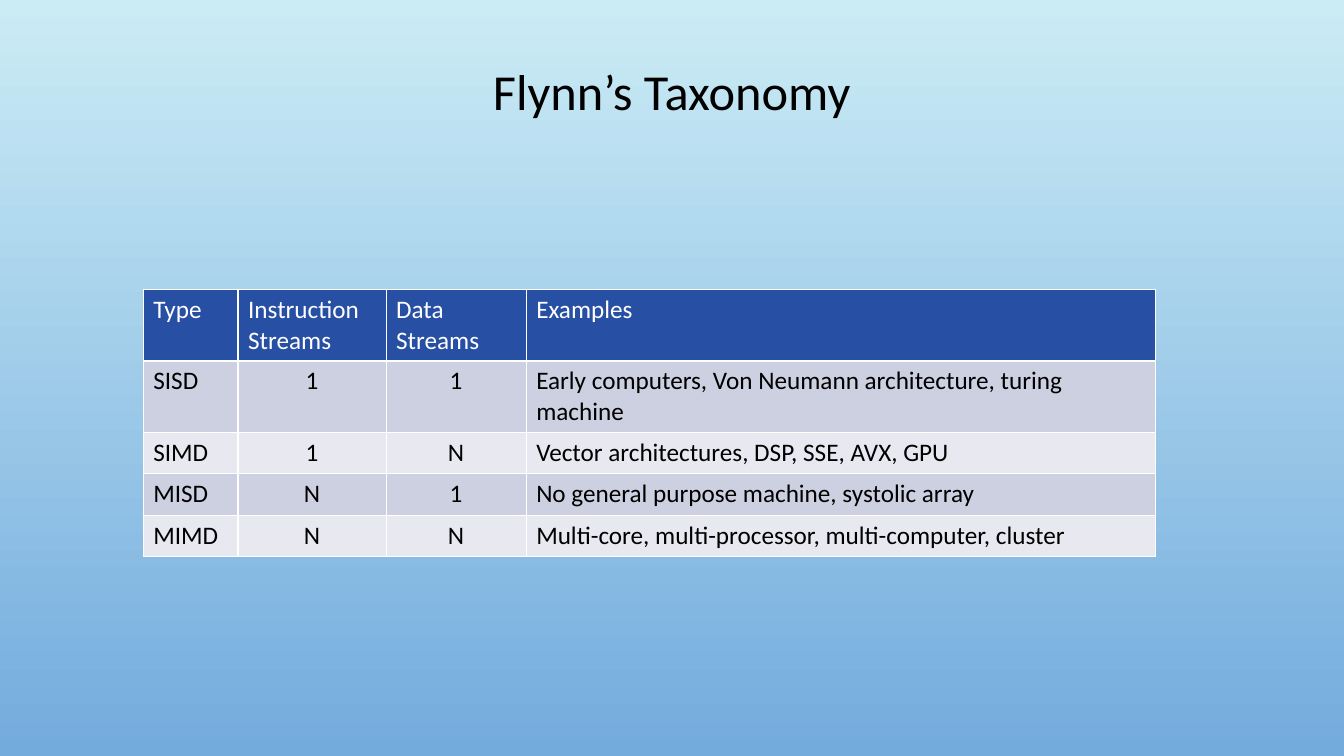
from dataclasses import dataclass

from lxml.etree import SubElement as Sub
from pptx import Presentation as Deck
from pptx.dml.color import RGBColor as Rgb
from pptx.enum.text import MSO_ANCHOR as Anchor, MSO_AUTO_SIZE as Fit, PP_ALIGN as Align
from pptx.oxml.ns import qn
from pptx.util import Cm, Pt


@dataclass(frozen=True)
class Theme:
    """Colours, font and type sizes of the slide."""
    font: str = "Calibri"
    sky: str = "CBECF5"
    sea: str = "73ABDD"
    head: str = "274FA4"
    odd: str = "CDD0E0"
    even: str = "E8E9F0"
    ink: str = "000000"
    white: str = "FFFFFF"
    title: int = 36
    cell: int = 18


LOOK = Theme()
WIDTHS = (2.39, 3.73, 3.53, 15.85)
ROWS = (
    ("Type", "Instruction Streams", "Data Streams", "Examples"),
    ("SISD", "1", "1", "Early computers, Von Neumann architecture, turing machine"),
    ("SIMD", "1", "N", "Vector architectures, DSP, SSE, AVX, GPU"),
    ("MISD", "N", "1", "No general purpose machine, systolic array"),
    ("MIMD", "N", "N", "Multi-core, multi-processor, multi-computer, cluster"),
)


def write(frame, text, size=LOOK.cell, color=LOOK.ink, align=Align.LEFT, space=None):
    """Put formatted text into a text frame."""
    frame.text = text
    para = frame.paragraphs[0]
    para.alignment = align
    para.line_spacing = space
    font = para.runs[0].font
    font.name, font.size, font.bold = LOOK.font, Pt(size), False
    font.color.rgb = Rgb.from_string(color)


def paint(slide):
    """Fill the background with a gradient from top to bottom."""
    fill = slide.background.fill
    fill.gradient()
    fill.gradient_angle = 270
    for stop, color in zip(fill.gradient_stops, (LOOK.sky, LOOK.sea)):
        stop.color.rgb = Rgb.from_string(color)


def add_title(slide, text):
    """Place and format the title."""
    title = slide.shapes.title
    title.left, title.top, title.width, title.height = Cm(2.54), Cm(0.81), Cm(28.78), Cm(3.12)
    frame = title.text_frame
    write(frame, text, size=LOOK.title, align=Align.CENTER, space=0.9)
    frame.vertical_anchor = Anchor.MIDDLE
    frame.auto_size = Fit.NONE


def edge(cell):
    """Draw thin white borders around a cell."""
    props = cell._tc.get_or_add_tcPr()
    for side in "LRTB":
        line = Sub(props, qn(f"a:ln{side}"), w=str(Pt(1)))
        Sub(Sub(line, qn("a:solidFill")), qn("a:srgbClr"), val=LOOK.white)


def add_grid(slide, rows, widths):
    """Add the table with a header and striped rows."""
    table = slide.shapes.add_table(
        len(rows), len(widths), Cm(3.61), Cm(7.29), Cm(sum(widths)), Cm(1.04 * len(rows))
    ).table
    for col, width in zip(table.columns, widths):
        col.width = Cm(width)
    for r, row in enumerate(rows):
        back = LOOK.head if r == 0 else (LOOK.even, LOOK.odd)[r % 2]
        for c, text in enumerate(row):
            cell = table.cell(r, c)
            edge(cell)
            cell.fill.solid()
            cell.fill.fore_color.rgb = Rgb.from_string(back)
            write(
                cell.text_frame, text,
                color=LOOK.ink if r else LOOK.white,
                align=Align.CENTER if r and c in (1, 2) else Align.LEFT,
            )


def main():
    """Build and save the slide."""
    deck = Deck()
    deck.slide_width, deck.slide_height = Cm(33.87), Cm(19.05)
    slide = deck.slides.add_slide(deck.slide_layouts[5])
    paint(slide)
    add_title(slide, "Flynn’s Taxonomy")
    add_grid(slide, ROWS, WIDTHS)
    deck.save("out.pptx")


if __name__ == "__main__":
    main()
